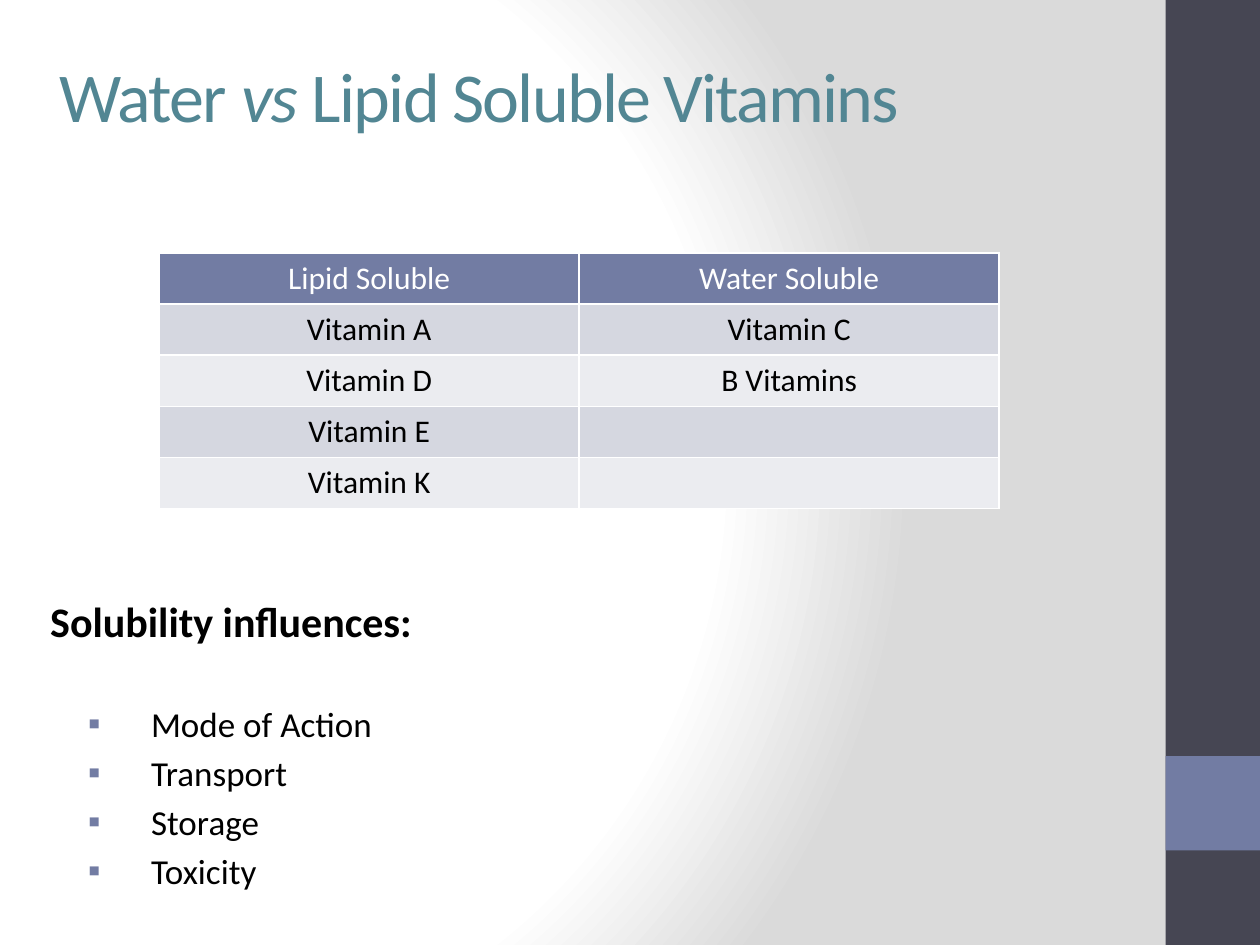
from lxml.etree import SubElement
from pptx import Presentation
from pptx.dml.color import RGBColor
from pptx.enum.shapes import MSO_SHAPE
from pptx.enum.text import MSO_ANCHOR, MSO_AUTO_SIZE, PP_ALIGN
from pptx.oxml.ns import qn
from pptx.util import Pt

FONT = "Calibri"
ACCENT = "727CA3"
DARK = "464653"
TEAL = "528693"
WHITE = "FFFFFF"
BLACK = "000000"
BANDS = ("D5D7E0", "EBECF0")


def colour(value):
    """Turn a hex string into a colour."""
    return RGBColor.from_string(value)


def add_node(parent, tag, **attributes):
    """Append a drawing element with its attributes."""
    return SubElement(parent, qn(f"a:{tag}"), attributes)


def add_colour(parent, value):
    """Append a hex colour element."""
    add_node(parent, "srgbClr", val=value)


def add_text(para, text, size=18, ink=BLACK, bold=False, italic=False, spacing=None):
    """Add a formatted span to a paragraph."""
    span = para.add_run()
    span.text = text
    font = span.font
    font.name, font.size, font.bold, font.italic = FONT, Pt(size), bold, italic
    font.color.rgb = colour(ink)
    if spacing is not None:
        font._element.set("spc", str(int(spacing * 100)))


def paint_background(page):
    """Fill the page with a circular gradient."""
    page.background.fill.gradient()
    gradient = next(page.element.iter(qn("a:gradFill")))
    for child in list(gradient):
        gradient.remove(child)
    stops = add_node(gradient, "gsLst")
    for position, value in ((0, WHITE), (75, WHITE), (100, "DADADA")):
        add_colour(add_node(stops, "gs", pos=str(position * 1000)), value)
    shade = add_node(gradient, "path", path="circle")
    add_node(shade, "fillToRect", l="20000", t="50000", r="100000", b="50000")


def add_block(page, left, top, width, height, fill):
    """Add a plain filled rectangle."""
    block = page.shapes.add_shape(
        MSO_SHAPE.RECTANGLE, Pt(left), Pt(top), Pt(width), Pt(height))
    block.shadow.inherit = False
    block.fill.solid()
    block.fill.fore_color.rgb = colour(fill)
    block.line.fill.background()


def add_sidebar(page, left, top, width, height):
    """Add the dark side band with its accent square."""
    add_block(page, left, top, width, height, DARK)
    add_block(page, left, top + height * 0.8, width, width, ACCENT)


def add_title(page, left, top, width, height, spans):
    """Place and fill the title, given text and italic pairs."""
    title = page.shapes.title
    title.left, title.top, title.width, title.height = map(Pt, (left, top, width, height))
    frame = title.text_frame
    frame.auto_size = MSO_AUTO_SIZE.NONE
    frame.vertical_anchor = MSO_ANCHOR.MIDDLE
    para = frame.paragraphs[0]
    para.alignment = PP_ALIGN.LEFT
    for text, italic in spans:
        add_text(para, text, size=40, ink=TEAL, italic=italic, spacing=-1)


def format_cell(cell, text, fill, ink):
    """Fill, border and label one table cell."""
    para = cell.text_frame.paragraphs[0]
    para.alignment = PP_ALIGN.CENTER
    if text:
        add_text(para, text, ink=ink)
    properties = cell._tc.get_or_add_tcPr()
    for side in ("lnL", "lnR", "lnT", "lnB"):
        line = add_node(properties, side, w=str(Pt(1)))
        add_colour(add_node(line, "solidFill"), WHITE)
    cell.fill.solid()
    cell.fill.fore_color.rgb = colour(fill)


def add_vitamin_table(page, left, top, width, height, rows):
    """Add a table with a header row and banded body."""
    table = page.shapes.add_table(
        len(rows), len(rows[0]), Pt(left), Pt(top), Pt(width), Pt(height)).table
    for index, row in enumerate(rows):
        table.rows[index].height = Pt(height / len(rows))
        fill = BANDS[(index - 1) % 2] if index else ACCENT
        for column, text in enumerate(row):
            format_cell(table.cell(index, column), text, fill, BLACK if index else WHITE)


def add_bullet(para, margin, indent):
    """Give a paragraph a hanging square bullet."""
    properties = para._p.get_or_add_pPr()
    properties.set("marL", str(Pt(margin)))
    properties.set("indent", str(Pt(-indent)))
    add_colour(add_node(properties, "buClr"), ACCENT)
    add_node(properties, "buFont", typeface=FONT)
    add_node(properties, "buChar", char="▪")


def add_influences(page, left, top, width, height, heading, items):
    """Add a bold heading above a bulleted list."""
    box = page.shapes.add_textbox(Pt(left), Pt(top), Pt(width), Pt(height))
    frame = box.text_frame
    frame.word_wrap = True
    add_text(frame.paragraphs[0], heading, size=24, bold=True)
    for index, item in enumerate(items):
        para = frame.add_paragraph()
        para.space_before = Pt(4 if index else 32)
        add_bullet(para, 57.6, 36)
        add_text(para, item, size=20)


def main():
    """Build and save the deck."""
    deck = Presentation()
    deck.slide_width, deck.slide_height = Pt(720), Pt(540)
    page = deck.slides.add_slide(deck.slide_layouts[5])
    paint_background(page)
    add_sidebar(page, 666, 0, 54, 540)
    add_title(page, 27, 9, 612, 90,
              (("Water ", False), ("vs", True), (" Lipid Soluble Vitamins", False)))
    add_influences(page, 21.6, 337, 586, 191, "Solubility influences:",
                   ("Mode of Action", "Transport", "Storage", "Toxicity"))
    add_vitamin_table(page, 91, 144.6, 480, 146, (
        ("Lipid Soluble", "Water Soluble"),
        ("Vitamin A", "Vitamin C"),
        ("Vitamin D", "B Vitamins"),
        ("Vitamin E", ""),
        ("Vitamin K", ""),
    ))
    deck.save("out.pptx")


if __name__ == "__main__":
    main()
